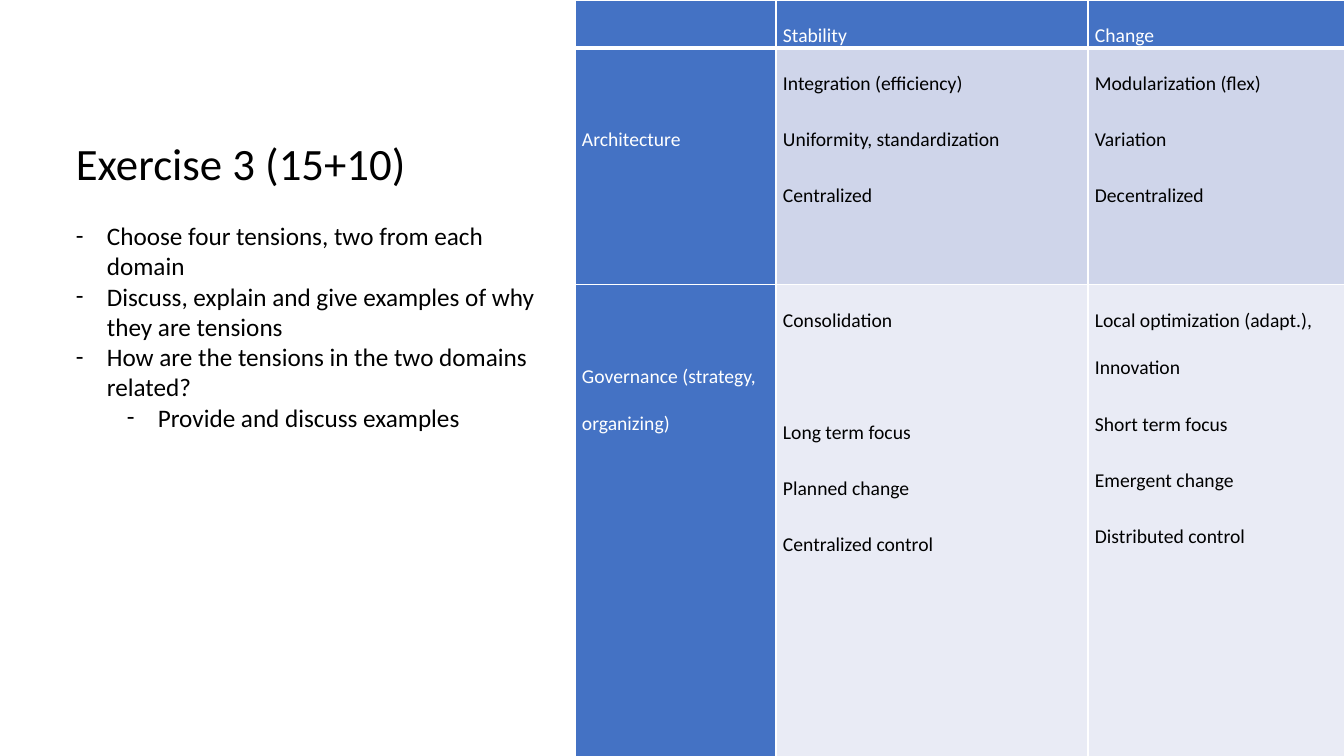
from lxml.etree import SubElement as Sub
from pptx import Presentation as Deck
from pptx.dml.color import RGBColor as RGB
from pptx.enum.text import MSO_ANCHOR as Anchor, MSO_AUTO_SIZE as Fit
from pptx.oxml.ns import qn
from pptx.util import Pt

WIDE, HIGH = 1344, 756
SCALE = 12192000 / WIDE
WHITE = RGB(0xFF, 0xFF, 0xFF)
BLACK = RGB(0, 0, 0)
BLUE = RGB(0x44, 0x72, 0xC4)
BANDS = [BLUE, RGB(0xCF, 0xD5, 0xEA), RGB(0xE9, 0xEB, 0xF5)]

STEP = 56  # height of one double-spaced line in the table
COLS = [201, 312, 257]
ROWS = [45, 237, 474]
CELLS = [
    [[], ["Stability"], ["Change"]],
    [["Architecture"],
     ["Integration (efficiency)", "Uniformity, standardization", "Centralized"],
     ["Modularization (flex)", "Variation", "Decentralized"]],
    [["Governance (strategy, organizing)"],
     ["Consolidation", "Long term focus", "Planned change", "Centralized control"],
     ["Local optimization (adapt.), Innovation", "Short term focus",
      "Emergent change", "Distributed control"]],
]
TASKS = [
    ("Choose four tensions, two from each domain", 31),
    ("Discuss, explain and give examples of why they are tensions", 31),
    ("How are the tensions in the two domains related?", 31),
    ("Provide and discuss examples", 82),
]


def px(num):
    return round(num * SCALE)


def write(frame, text, size=18, color=BLACK, font="Calibri", line=None,
          before=0, after=0, dash=0):
    """Add one paragraph; dash is the text indent in px of a dashed item."""
    para = frame.paragraphs[-1]
    if para.runs:
        para = frame.add_paragraph()
    para.space_before, para.space_after = Pt(before), Pt(after)
    if line:
        para.line_spacing = line
    if dash:
        props = para._p.get_or_add_pPr()
        props.set("marL", str(px(dash)))
        props.set("indent", str(-px(31)))
        Sub(props, qn("a:buFont"), typeface=font)
        Sub(props, qn("a:buChar"), char="-")
    run = para.add_run()
    run.text = text
    run.font.name, run.font.size, run.font.bold = font, Pt(size), False
    run.font.color.rgb = color


class Page:
    def __init__(self, deck):
        self.slide = deck.slides.add_slide(deck.slide_layouts[6])
        self.edge = WHITE

    def box(self, x, y, w, h):
        frame = self.slide.shapes.add_textbox(px(x), px(y), px(w), px(h)).text_frame
        frame.word_wrap = True
        frame.auto_size = Fit.SHAPE_TO_FIT_TEXT
        return frame

    def grid(self, x, y, cols, rows):
        table = self.slide.shapes.add_table(
            len(rows), len(cols), px(x), px(y), px(sum(cols)), px(sum(rows))).table
        table.horz_banding = False
        for col, wide in zip(table.columns, cols):
            col.width = px(wide)
        for row, high in zip(table.rows, rows):
            row.height = px(high)
        return table

    def cell(self, cell, fill, edges, top=0):
        cell.margin_left = cell.margin_right = px(7)
        cell.margin_top, cell.margin_bottom = px(top), 0
        cell.vertical_anchor = Anchor.TOP
        props = cell._tc.get_or_add_tcPr()
        for side, width in edges.items():
            line = Sub(props, qn("a:ln" + side), w=str(Pt(width)))
            Sub(Sub(line, qn("a:solidFill")), qn("a:srgbClr"), val=str(self.edge))
        cell.fill.solid()
        cell.fill.fore_color.rgb = fill
        return cell.text_frame


def main():
    deck = Deck()
    deck.slide_width, deck.slide_height = px(WIDE), px(HIGH)
    page = Page(deck)

    # Table of tensions
    table = page.grid(575, 0, COLS, ROWS)
    for r, row in enumerate(CELLS):
        for c, texts in enumerate(row):
            head, side = r == 0, c == 0
            edges = dict(L=1, R=1, T=1, B=3) if head else dict(L=1, R=1, B=1)
            frame = page.cell(table.cell(r, c), BLUE if side else BANDS[r], edges,
                              top=STEP if side and not head else 0)
            for text in texts:
                write(frame, text, size=14, color=WHITE if head or side else BLACK,
                      line=2.0, after=6,
                      before=40 if (c, text) == (1, "Long term focus") else 0)

    # Title and tasks
    frame = page.box(66, 131, 494, 308)
    write(frame, "Exercise 3 (15+10)", size=32, after=22)
    for text, dash in TASKS:
        write(frame, text, dash=dash)

    deck.save("out.pptx")


if __name__ == "__main__":
    main()
